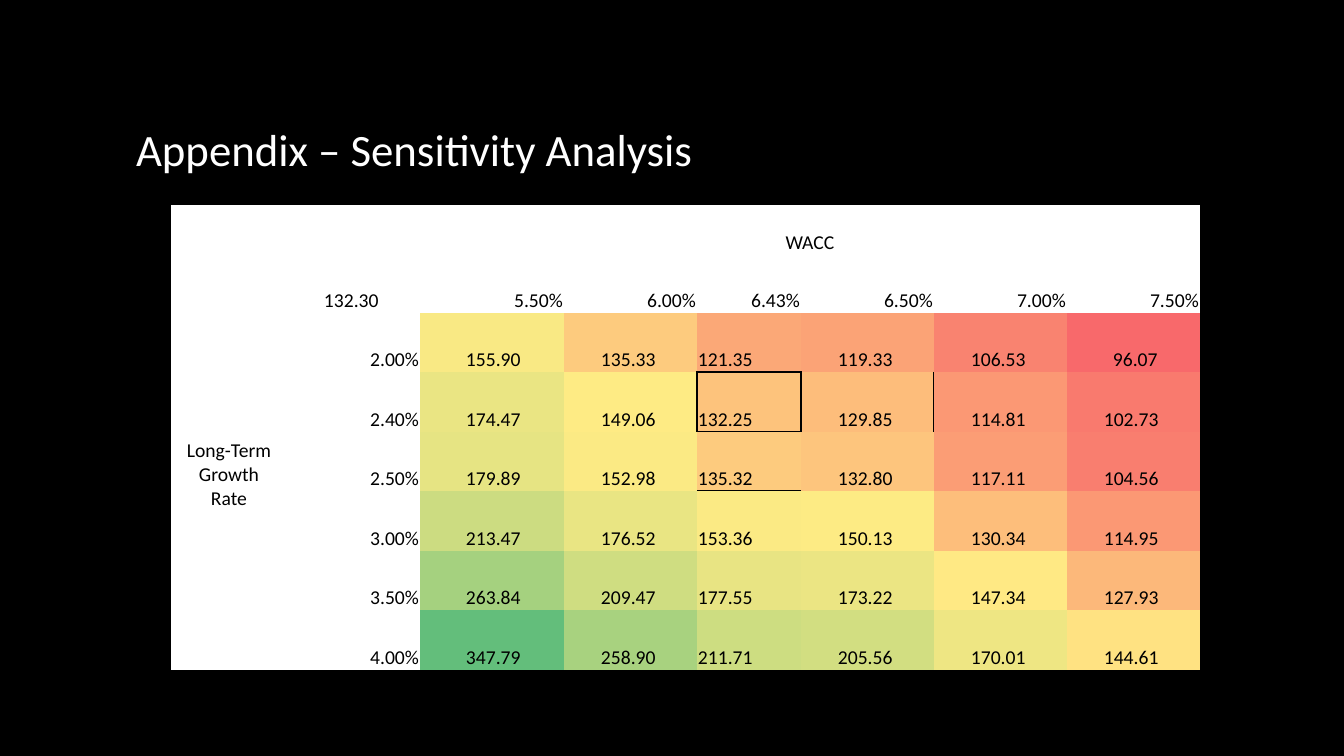
import pptx
import pptx.dml.color
import pptx.enum.text
import pptx.oxml
import pptx.oxml.ns
import pptx.util

ALIGN = pptx.enum.text.PP_ALIGN
ANCHOR = pptx.enum.text.MSO_ANCHOR
EMU_PER_PX = 12192000 / 1344
PLAIN_TABLE_STYLE = "{2D5ABB26-0587-4C30-8999-92F81FD0307C}"

COLUMN_WIDTHS = [116, 133, 144, 133, 104, 133, 133, 133]
ROW_HEIGHTS = [75, 33] + [59, 60] * 3
COLUMN_INDENTS = [45, 36, 0, 36, 36, 36]

BASE_VALUE = "132.30"
WACC_RATES = ["5.50%", "6.00%", "6.43%", "6.50%", "7.00%", "7.50%"]
GROWTH_RATES = ["2.00%", "2.40%", "2.50%", "3.00%", "3.50%", "4.00%"]
SHARE_VALUES = [
    [155.90, 135.33, 121.35, 119.33, 106.53, 96.07],
    [174.47, 149.06, 132.25, 129.85, 114.81, 102.73],
    [179.89, 152.98, 135.32, 132.80, 117.11, 104.56],
    [213.47, 176.52, 153.36, 150.13, 130.34, 114.95],
    [263.84, 209.47, 177.55, 173.22, 147.34, 127.93],
    [347.79, 258.90, 211.71, 205.56, 170.01, 144.61],
]


def px(length):
    return pptx.util.Emu(round(length * EMU_PER_PX))


def color(hex_code):
    return pptx.dml.color.RGBColor.from_string(hex_code)


def blend(start, end, share):
    channels = zip(bytes.fromhex(start), bytes.fromhex(end))
    return "".join(f"{round(a + (b - a) * share):02X}" for a, b in channels)


def heat_color(value):
    ranked = sorted(sum(SHARE_VALUES, []))
    middle = len(ranked) // 2
    median = (ranked[middle - 1] + ranked[middle]) / 2
    if value < median:
        return blend("F8696B", "FFEB84", (value - ranked[0]) / (median - ranked[0]))
    return blend("FFEB84", "63BE7B", (value - median) / (ranked[-1] - median))


def write_text(frame, text, *, font, size, hex_code, align=ALIGN.LEFT, indent=0):
    paragraph = frame.paragraphs[0]
    paragraph.alignment = align
    if indent:
        properties = paragraph._p.get_or_add_pPr()
        properties.set("marL", str(px(indent)))
        properties.set("indent", "0")
    run = paragraph.add_run()
    run.text = text
    run.font.name = font
    run.font.size = pptx.util.Pt(size)
    run.font.color.rgb = color(hex_code)


class SensitivitySlide:
    font = "Calibri"
    title_size = 32
    table_size = 14

    def __init__(self, deck):
        self.slide = deck.slides.add_slide(deck.slide_layouts[5])
        self.slide.background.fill.solid()
        self.slide.background.fill.fore_color.rgb = color("000000")

    def title(self, text, left, top, width, height):
        heading = self.slide.shapes.title
        heading.left, heading.top = px(left), px(top)
        heading.width, heading.height = px(width), px(height)
        frame = heading.text_frame
        frame.word_wrap = True
        frame.auto_size = pptx.enum.text.MSO_AUTO_SIZE.NONE
        frame.vertical_anchor = ANCHOR.MIDDLE
        write_text(frame, text, font=self.font, size=self.title_size, hex_code="FFFFFF")

    def table(self, left, top, widths, heights):
        frame = self.slide.shapes.add_table(
            len(heights), len(widths), px(left), px(top), px(sum(widths)), px(sum(heights))
        )
        grid = frame.table
        grid.first_row = grid.horz_banding = False
        grid._tbl.tblPr.find(pptx.oxml.ns.qn("a:tableStyleId")).text = PLAIN_TABLE_STYLE
        for column, width in zip(grid.columns, widths):
            column.width = px(width)
        for row, height in zip(grid.rows, heights):
            row.height = px(height)
        for cell in grid.iter_cells():
            self.fill(cell, "FFFFFF")
        return grid

    def fill(self, cell, hex_code):
        cell.fill.solid()
        cell.fill.fore_color.rgb = color(hex_code)

    def label(self, cell, text):
        cell.vertical_anchor = ANCHOR.MIDDLE
        cell.margin_left = cell.margin_right = px(11)
        cell.margin_top = cell.margin_bottom = px(6)
        self.cell_text(cell, text, align=ALIGN.CENTER)

    def figure(self, cell, text, **layout):
        cell.vertical_anchor = ANCHOR.BOTTOM
        cell.margin_left = cell.margin_right = cell.margin_top = px(1)
        cell.margin_bottom = 0
        self.cell_text(cell, text, **layout)

    def cell_text(self, cell, text, **layout):
        write_text(
            cell.text_frame, text, font=self.font, size=self.table_size,
            hex_code="000000", **layout
        )

    def border(self, cell, sides):
        properties = cell._tc.get_or_add_tcPr()
        for position, side in enumerate(sides):
            line = pptx.oxml.parse_xml(
                f'<a:ln{side} {pptx.oxml.ns.nsdecls("a")} w="12700">'
                '<a:solidFill><a:srgbClr val="000000"/></a:solidFill>'
                f"</a:ln{side}>"
            )
            properties.insert(position, line)


def main():
    deck = pptx.Presentation()
    deck.slide_width, deck.slide_height = px(1344), px(756)
    page = SensitivitySlide(deck)
    page.title("Appendix – Sensitivity Analysis", 126, 68, 1092, 162)

    grid = page.table(171, 205, COLUMN_WIDTHS, ROW_HEIGHTS)
    grid.cell(0, 2).merge(grid.cell(0, 7))
    grid.cell(1, 0).merge(grid.cell(7, 0))
    page.label(grid.cell(0, 2), "WACC")
    page.label(grid.cell(1, 0), "Long-Term Growth Rate")
    page.figure(grid.cell(1, 1), BASE_VALUE, indent=36)

    for column, rate in enumerate(WACC_RATES, start=2):
        page.figure(grid.cell(1, column), rate, align=ALIGN.RIGHT)
    for row, (rate, values) in enumerate(zip(GROWTH_RATES, SHARE_VALUES), start=2):
        page.figure(grid.cell(row, 1), rate, align=ALIGN.RIGHT)
        for column, (value, indent) in enumerate(zip(values, COLUMN_INDENTS), start=2):
            cell = grid.cell(row, column)
            digit_shift = 9 if value < 100 else 0
            page.figure(cell, f"{value:.2f}", indent=indent + digit_shift)
            page.fill(cell, heat_color(value))

    base_row, base_column = 3, 4
    page.border(grid.cell(base_row, base_column), "LRTB")
    page.border(grid.cell(base_row - 1, base_column), "B")
    page.border(grid.cell(base_row + 1, base_column), "T")
    page.border(grid.cell(base_row, base_column - 1), "R")
    page.border(grid.cell(base_row, base_column + 1), "L")
    deck.save("out.pptx")


if __name__ == "__main__":
    main()
